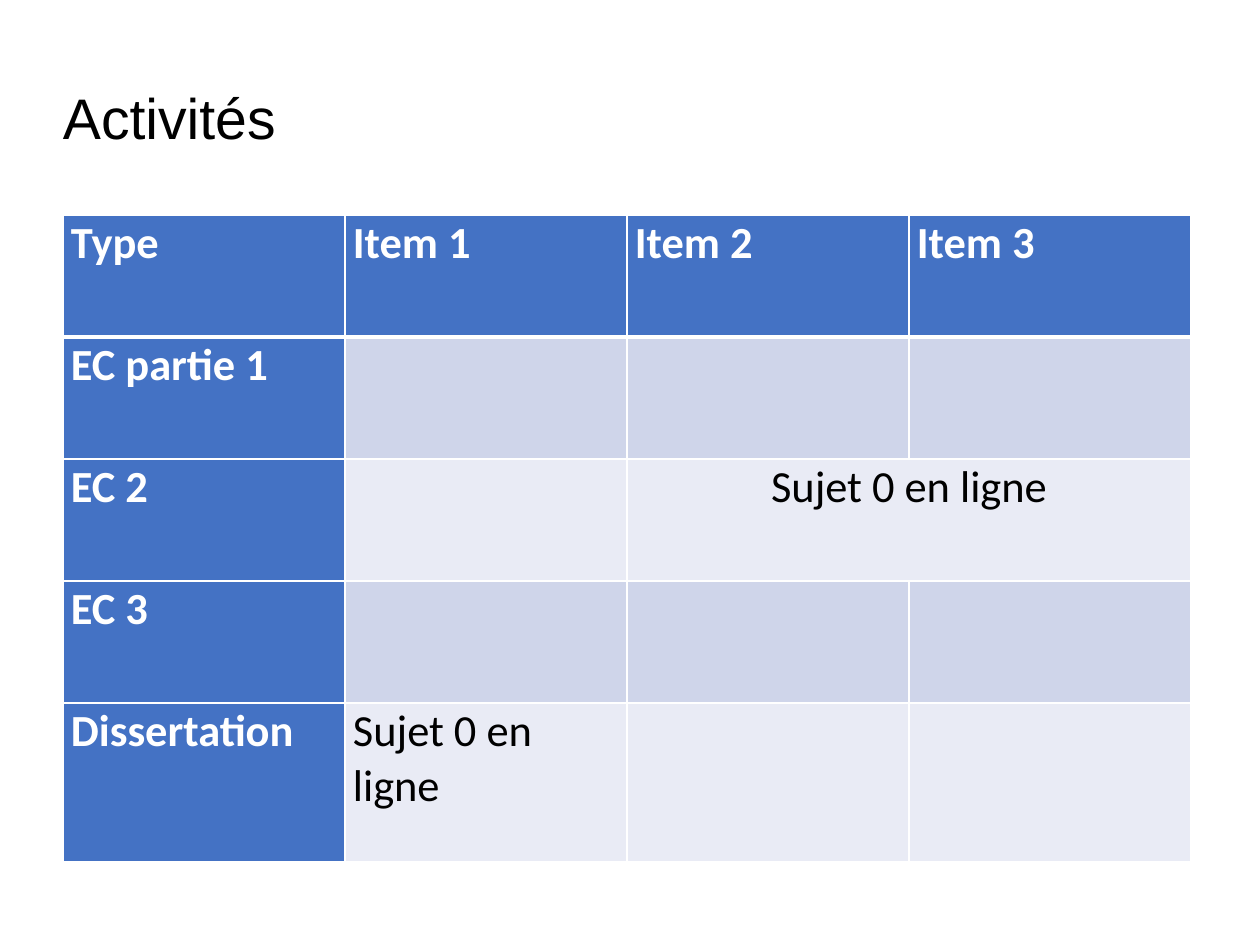
from lxml import etree
from pptx import Presentation
from pptx.dml.color import RGBColor
from pptx.enum.text import MSO_ANCHOR, PP_ALIGN
from pptx.oxml.ns import qn
from pptx.util import Pt

LEFT, CENTER = PP_ALIGN.LEFT, PP_ALIGN.CENTER
MIDDLE = MSO_ANCHOR.MIDDLE

# Content
TITLE = "Activités"
ACTIVITIES = [
    ["Type", "Item 1", "Item 2", "Item 3"],
    ["EC partie 1", "", "", ""],
    ["EC 2", "", "Sujet 0 en ligne", ""],
    ["EC 3", "", "", ""],
    ["Dissertation", "Sujet 0 en ligne", "", ""],
]
SHARED = (2, 2, 3)  # row, first column, last column

# Style and layout
BLACK = RGBColor(0x00, 0x00, 0x00)
WHITE = RGBColor(0xFF, 0xFF, 0xFF)
BLUE = RGBColor(0x44, 0x72, 0xC4)
BANDS = [RGBColor(0xE9, 0xEB, 0xF5), RGBColor(0xCF, 0xD5, 0xEA)]
PX = 8000
SLIDE_W, SLIDE_H = 1260, 945
MARGIN = 63
TITLE_TOP, TITLE_W, TITLE_H = 72, 900, 90
TABLE_TOP, COLUMN_W = 215, 282
ROW_HEIGHTS = [122, 122, 122, 122, 159]
CELL_PAD = 8


def add_text(paragraph, text, font_name, size, color, bold=False):
    run = paragraph.add_run()
    run.text = text
    run.font.name = font_name
    run.font.size = Pt(size)
    run.font.bold = bold
    run.font.color.rgb = color


def set_borders(cell, top, bottom):
    props = cell._tc.get_or_add_tcPr()
    widths = [("a:lnL", 1), ("a:lnR", 1), ("a:lnT", top), ("a:lnB", bottom)]
    for position, (side, width) in enumerate(widths):
        line = etree.Element(qn(side), w=str(Pt(width)))
        fill = etree.SubElement(line, qn("a:solidFill"))
        etree.SubElement(fill, qn("a:srgbClr"), val=str(WHITE))
        props.insert(position, line)


prs = Presentation()
prs.slide_width, prs.slide_height = SLIDE_W * PX, SLIDE_H * PX
slide = prs.slides.add_slide(prs.slide_layouts[5])

# Title
title = slide.shapes.title
title.left, title.top = MARGIN * PX, TITLE_TOP * PX
title.width, title.height = TITLE_W * PX, TITLE_H * PX
frame = title.text_frame
frame.margin_left = frame.margin_right = frame.margin_top = frame.margin_bottom = 0
frame.vertical_anchor = MIDDLE
frame.paragraphs[0].alignment = LEFT
add_text(frame.paragraphs[0], TITLE, "Arial", 36, BLACK)

# Table grid
n_rows, n_columns = len(ACTIVITIES), len(ACTIVITIES[0])
table = slide.shapes.add_table(
    n_rows, n_columns, MARGIN * PX, TABLE_TOP * PX,
    n_columns * COLUMN_W * PX, sum(ROW_HEIGHTS) * PX).table
for column in table.columns:
    column.width = COLUMN_W * PX
for row, height in zip(table.rows, ROW_HEIGHTS):
    row.height = height * PX

# Table cells
for r, activity in enumerate(ACTIVITIES):
    for c, text in enumerate(activity):
        cell = table.cell(r, c)
        heading = r == 0 or c == 0
        cell.fill.solid()
        cell.fill.fore_color.rgb = BLUE if heading else BANDS[r % 2]
        set_borders(cell, top=3 if r == 1 else 1, bottom=3 if r == 0 else 1)
        cell.margin_left = cell.margin_right = CELL_PAD * PX
        cell.margin_top = cell.margin_bottom = 0
        if text:
            paragraph = cell.text_frame.paragraphs[0]
            paragraph.alignment = CENTER if (r, c) == SHARED[:2] else LEFT
            paragraph.line_spacing = 1.02
            paragraph.space_after = Pt(8)
            add_text(paragraph, text, "Calibri", 28,
                     WHITE if heading else BLACK, heading)

shared_row, first, last = SHARED
table.cell(shared_row, first).merge(table.cell(shared_row, last))

prs.save("out.pptx")
